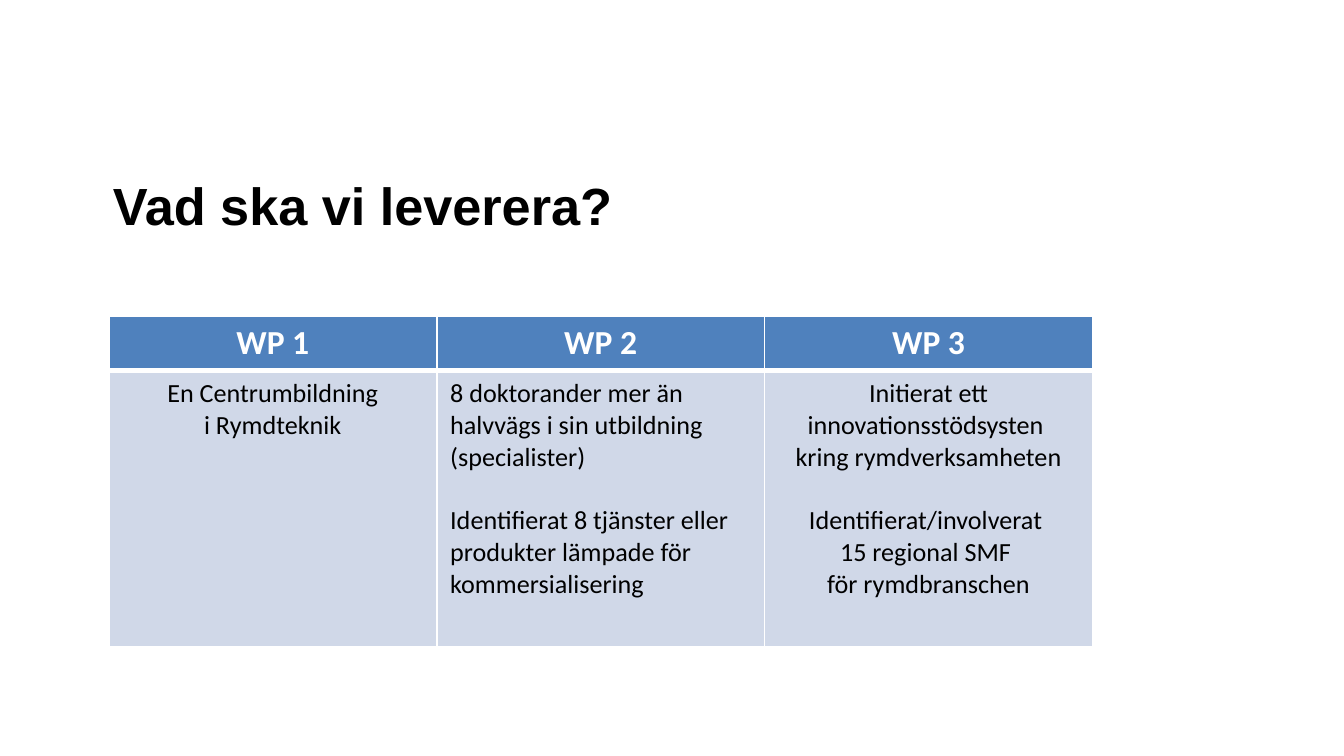
from lxml.etree import SubElement
from pptx import Presentation
from pptx.dml.color import RGBColor
from pptx.enum.text import MSO_ANCHOR as Anchor, PP_ALIGN as Align
from pptx.oxml.ns import qn
from pptx.util import Inches, Pt

COLORS = {"text": "000000", "white": "FFFFFF", "header": "4F81BD", "body": "D0D8E8"}
TITLE_FONT = {"name": "Arial", "size": Pt(28), "bold": True}
HEADER_FONT = {"name": "Calibri", "size": Pt(18), "bold": True}
BODY_FONT = {"name": "Calibri", "size": Pt(14), "bold": False}

# Heading, alignment and deliverables of each work package (\v is a line break)
WORK_PACKAGES = [
    ("WP 1", Align.CENTER, ["En Centrumbildning\vi Rymdteknik"]),
    ("WP 2", Align.LEFT, [
        "8 doktorander mer än halvvägs i sin utbildning (specialister)",
        "Identifierat 8 tjänster eller produkter lämpade för kommersialisering",
    ]),
    ("WP 3", Align.CENTER, [
        "Initierat ett innovationsstödsysten \vkring rymdverksamheten",
        "Identifierat/involverat \v15 regional SMF \vför rymdbranschen",
    ]),
]


def write_paragraphs(frame, texts, align, font, color):
    for index, text in enumerate(texts):
        paragraph = frame.add_paragraph() if index else frame.paragraphs[0]
        paragraph.text = text
        paragraph.alignment = align
        if index:
            paragraph.space_before = Pt(17)
        for run in paragraph.runs:
            for attribute, value in font.items():
                setattr(run.font, attribute, value)
            run.font.color.rgb = RGBColor.from_string(COLORS[color])


def set_borders(cell, widths):
    properties = cell._tc.get_or_add_tcPr()
    for side, width in widths.items():
        line = SubElement(properties, qn(f"a:ln{side}"), w=str(Pt(width)))
        fill = SubElement(line, qn("a:solidFill"))
        SubElement(fill, qn("a:srgbClr"), val=COLORS["white"])


def fill_cell(cell, color, borders):
    set_borders(cell, borders)
    cell.fill.solid()
    cell.fill.fore_color.rgb = RGBColor.from_string(COLORS[color])


def add_title(slide, text):
    title = slide.shapes.title
    title.left, title.top = Inches(0.74), Inches(0.92)
    title.width, title.height = Inches(8.5), Inches(1.21)
    title.text_frame.vertical_anchor = Anchor.MIDDLE
    write_paragraphs(title.text_frame, [text], Align.LEFT, TITLE_FONT, "text")


def add_work_packages(slide):
    table = slide.shapes.add_table(
        2, len(WORK_PACKAGES), Inches(0.81), Inches(2.35), Inches(7.32), Inches(2.46)
    ).table
    table.rows[0].height, table.rows[1].height = Inches(0.41), Inches(2.05)
    for column, (heading, align, deliverables) in enumerate(WORK_PACKAGES):
        header, body = table.cell(0, column), table.cell(1, column)
        fill_cell(header, "header", {"L": 1, "R": 1, "T": 1, "B": 3})
        fill_cell(body, "body", {"L": 1, "R": 1, "T": 3, "B": 1})
        write_paragraphs(header.text_frame, [heading], Align.CENTER, HEADER_FONT, "white")
        write_paragraphs(body.text_frame, deliverables, align, BODY_FONT, "text")


def main():
    deck = Presentation()
    # Widescreen, 16:9
    deck.slide_width = Inches(10)
    deck.slide_height = deck.slide_width * 9 // 16
    slide = deck.slides.add_slide(deck.slide_layouts[5])
    add_title(slide, "Vad ska vi leverera?")
    add_work_packages(slide)
    deck.save("out.pptx")


if __name__ == "__main__":
    main()
